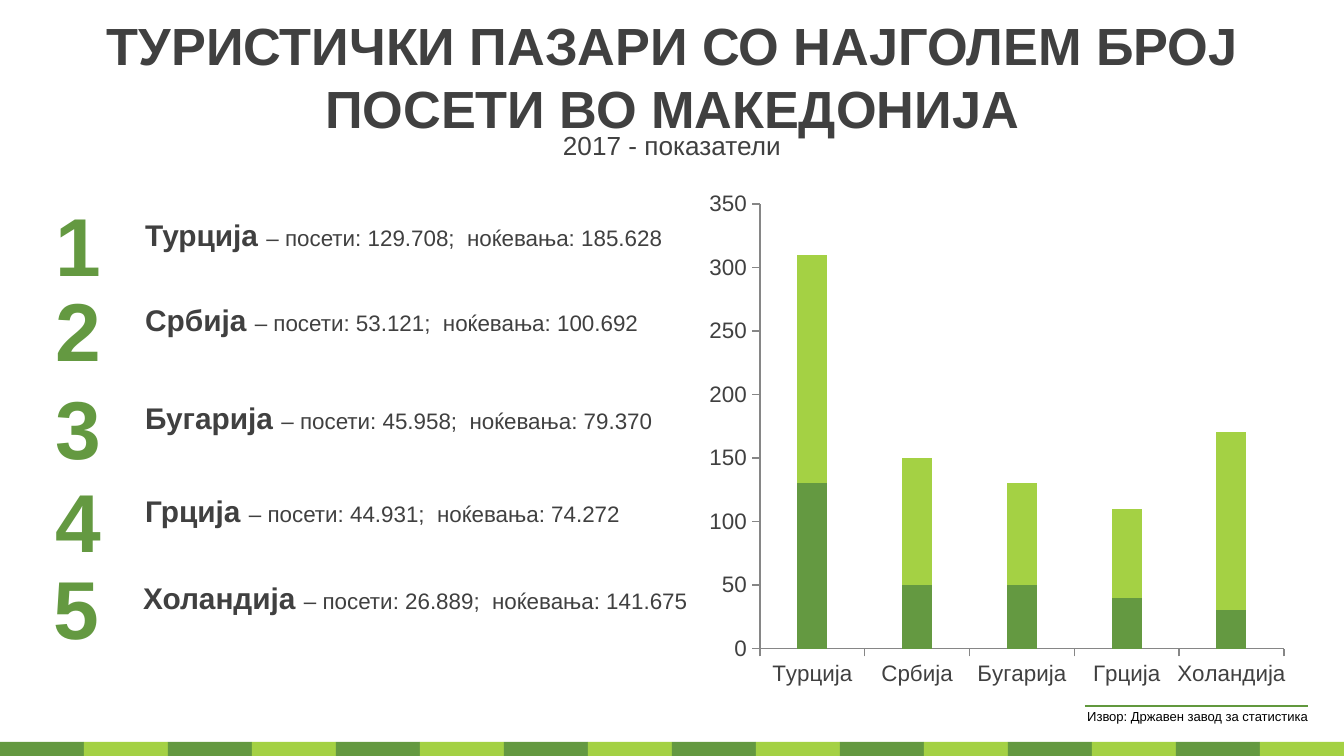
from dataclasses import dataclass

from lxml import etree
from pptx import Presentation
from pptx import util as u
from pptx.chart.data import CategoryChartData
from pptx.dml.color import RGBColor
from pptx.enum import chart as ch, shapes, text
from pptx.oxml import parse_xml
from pptx.oxml.ns import nsdecls, qn

PX = 914400 / 134.4
W, H = 1344, 756
CHART_W, CHART_H = 593, 509
FONT = "Arial"
DARK, GREEN, LIME, LINE = "404040", "649941", "A4D144", "61983D"
CENTER = text.PP_ALIGN.CENTER
MIDDLE, TOP = text.MSO_ANCHOR.MIDDLE, text.MSO_ANCHOR.TOP


@dataclass
class Run:
    text: str
    size: int
    color: str = DARK
    bold: bool = False


@dataclass
class Market:
    name: str
    figures: str
    y: int
    width: int
    visits: int
    nights: int
    dx: int = 0


MARKETS = [
    Market("Турција", "посети: 129.708;  ноќевања: 185.628", 188, 560, 130, 180),
    Market("Србија", "посети: 53.121;  ноќевања: 100.692", 273, 571, 50, 100),
    Market("Бугарија", "посети: 45.958;  ноќевања: 79.370", 371, 550, 50, 80),
    Market("Грција", "посети: 44.931;  ноќевања: 74.272", 464, 519, 40, 70),
    Market("Холандија", "посети: 26.889;  ноќевања: 141.675", 551, 574, 30, 140, -2),
]


def px(n: int) -> u.Emu:
    return u.Emu(round(n * PX))


def rgb(color: str) -> RGBColor:
    return RGBColor.from_string(color)


def set_attrs(obj, **values) -> None:
    for key, value in values.items():
        setattr(obj, key, value)


def place(sp, x: int, y: int, w: int, h: int) -> None:
    set_attrs(sp, left=px(x), top=px(y), width=px(w), height=px(h))


def write(sp, runs: list[Run], align=None, anchor=TOP, wrap=True) -> None:
    tf = sp.text_frame
    set_attrs(tf, auto_size=text.MSO_AUTO_SIZE.NONE, word_wrap=wrap,
              vertical_anchor=anchor)
    p = tf.paragraphs[0]
    p.alignment = align
    for run in runs:
        r = p.add_run()
        r.text = run.text
        set_attrs(r.font, name=FONT, size=u.Pt(run.size), bold=run.bold)
        r.font.color.rgb = rgb(run.color)


def add_text(s, x: int, y: int, w: int, h: int, runs: list[Run], **options) -> None:
    sp = s.shapes.add_textbox(px(x), px(y), px(w), px(h))
    write(sp, runs, **options)


def add_strip(s, count: int = 16) -> None:
    tile = W // count
    for i in range(count):
        sp = s.shapes.add_shape(shapes.MSO_SHAPE.RECTANGLE,
                                px(i * tile), px(742), px(tile), px(14))
        sp.shadow.inherit = False
        sp.fill.solid()
        sp.fill.fore_color.rgb = rgb((GREEN, LIME)[i % 2])
        sp.line.fill.background()


def add_market(s, rank: int, m: Market) -> None:
    add_text(s, m.dx - 4, m.y, 164, 112, [Run(str(rank), 44, GREEN, True)],
             align=CENTER, anchor=MIDDLE)
    add_text(s, m.dx + 132, m.y + 22, m.width, 50,
             [Run(f"{m.name} ", 16, bold=True), Run(f"– {m.figures}", 12)])


def add_market_chart(s) -> None:
    data = CategoryChartData()
    data.categories = [m.name for m in MARKETS]
    data.add_series("Series 1", [m.visits for m in MARKETS])
    data.add_series("Series 2", [m.nights for m in MARKETS])
    chart = s.shapes.add_chart(ch.XL_CHART_TYPE.COLUMN_STACKED, px(704), px(177),
                               px(CHART_W), px(CHART_H), data).chart
    set_attrs(chart, has_legend=False, has_title=False)
    set_attrs(chart.font, name=FONT, size=u.Pt(12))
    chart.font.color.rgb = rgb(DARK)

    plot = chart.plots[0]
    set_attrs(plot, gap_width=250, overlap=100, vary_by_categories=False)
    for series, color in zip(plot.series, (GREEN, LIME)):
        series.format.fill.solid()
        series.format.fill.fore_color.rgb = rgb(color)

    for axis in (chart.category_axis, chart.value_axis):
        set_attrs(axis, has_major_gridlines=False,
                  major_tick_mark=ch.XL_TICK_MARK.OUTSIDE,
                  minor_tick_mark=ch.XL_TICK_MARK.NONE)
        set_attrs(axis.tick_labels.font, name=FONT, size=u.Pt(12))
        axis.tick_labels.font.color.rgb = rgb(DARK)
        axis.format.line.color.rgb = rgb("868686")
        axis.format.line.width = u.Pt(0.75)
    set_attrs(chart.value_axis, minimum_scale=0, maximum_scale=350, major_unit=50)
    set_plot_area(chart, x=56 / CHART_W, y=27 / CHART_H,
                  w=524 / CHART_W, h=446 / CHART_H)


def set_plot_area(chart, **fractions: float) -> None:
    """Fix the inner plot area as fractions of the chart's size."""
    area = chart.plots[0]._element.getparent()
    for old in area.findall(qn("c:layout")):
        area.remove(old)
    sizes = "".join(f'<c:{k} val="{v:.4f}"/>' for k, v in fractions.items())
    area.insert(0, parse_xml(
        f'<c:layout {nsdecls("c")}><c:manualLayout><c:layoutTarget val="inner"/>'
        f'<c:xMode val="edge"/><c:yMode val="edge"/>{sizes}'
        '</c:manualLayout></c:layout>'))


def add_source_note(s) -> None:
    add_text(s, 1074, 702, 253, 30,
             [Run("Извор: Државен завод за статистика", 7, "000000")], wrap=False)
    line = s.shapes.add_connector(shapes.MSO_CONNECTOR.STRAIGHT,
                                  px(1085), px(706), px(1308), px(706))
    line.line.color.rgb = rgb(LINE)
    line.line.width = u.Pt(1)
    etree.SubElement(line._element.spPr, qn("a:effectLst"))


def main() -> None:
    prs = Presentation()
    set_attrs(prs, slide_width=px(W), slide_height=px(H))
    s = prs.slides.add_slide(prs.slide_layouts[5])
    add_strip(s)
    title = s.shapes.title
    place(title, 0, 18, W, 117)
    write(title, [Run("ТУРИСТИЧКИ ПАЗАРИ СО НАЈГОЛЕМ БРОЈ ПОСЕТИ ВО МАКЕДОНИЈА",
                      28, bold=True)], align=CENTER, anchor=MIDDLE)
    add_text(s, 0, 124, W, 42, [Run("2017 - показатели", 14)],
             align=CENTER, anchor=MIDDLE)
    add_market_chart(s)
    for rank, market in enumerate(MARKETS, 1):
        add_market(s, rank, market)
    add_source_note(s)
    prs.save("out.pptx")


if __name__ == "__main__":
    main()
